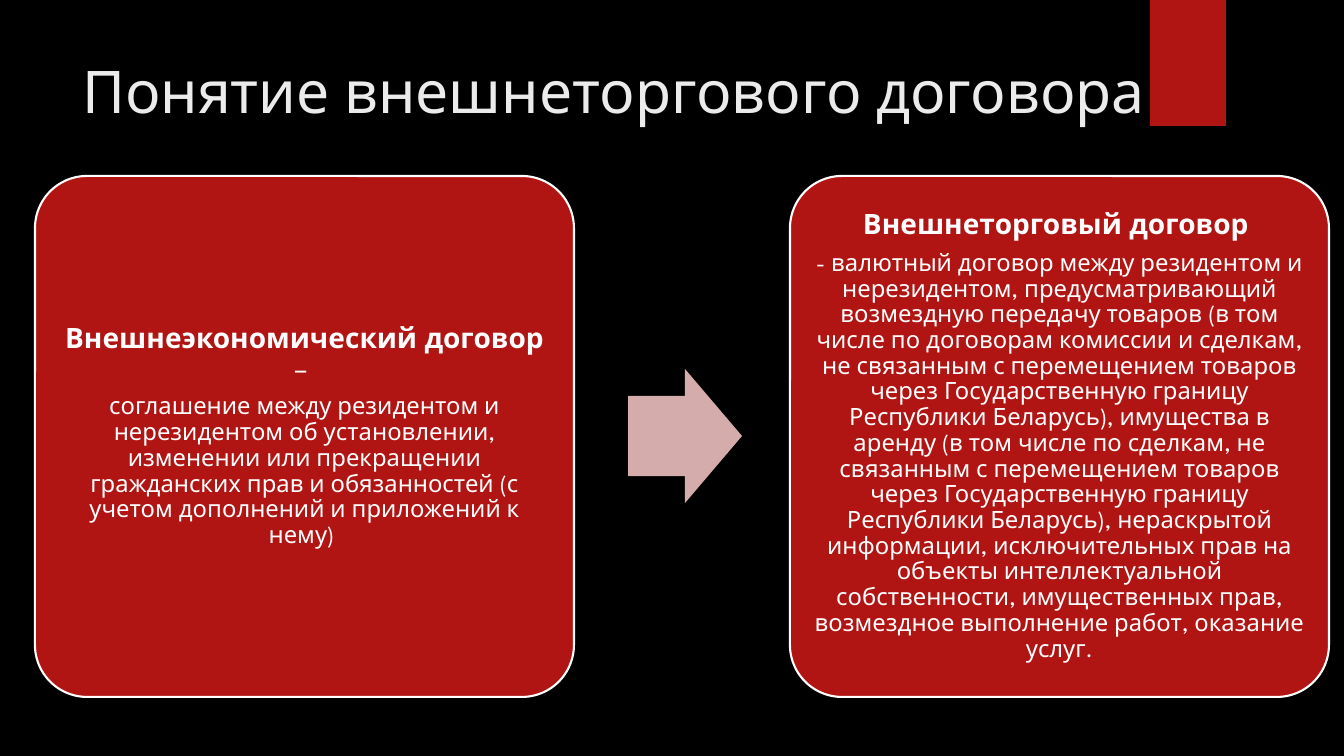
from dataclasses import dataclass

from pptx import Presentation
from pptx.dml.color import RGBColor
from pptx.enum.shapes import MSO_SHAPE as Shape
from pptx.enum.text import MSO_ANCHOR as Anchor, MSO_AUTO_SIZE as AutoSize, PP_ALIGN as Align
from pptx.util import Emu, Pt

EMU_PER_PX = 914400 / 100.8


@dataclass(frozen=True)
class Theme:
    font: str = "League Spartan"
    back: str = "000000"
    red: str = "B01513"
    pink: str = "D4ACAB"
    white: str = "FFFFFF"
    title: str = "EBEBEB"
    title_size: int = 42
    head_size: int = 20
    body_size: int = 17


THEME = Theme()

TITLE = "Понятие внешнеторгового договора"
FOREIGN_ECONOMIC = (
    [("Внешнеэкономический договор ", True), ("– ", False)],
    "соглашение между резидентом и нерезидентом об установлении, изменении или "
    "прекращении гражданских прав и обязанностей (с учетом дополнений и приложений к нему) ",
)
FOREIGN_TRADE = (
    [("Внешнеторговый договор ", True)],
    "- валютный договор между резидентом и нерезидентом, предусматривающий возмездную "
    "передачу товаров (в том числе по договорам комиссии и сделкам, не связанным с "
    "перемещением товаров через Государственную границу Республики Беларусь), имущества "
    "в аренду (в том числе по сделкам, не связанным с перемещением товаров через "
    "Государственную границу Республики Беларусь), нераскрытой информации, исключительных "
    "прав на объекты интеллектуальной собственности, имущественных прав, возмездное "
    "выполнение работ, оказание услуг.",
)


def px(n):
    return Emu(round(n * EMU_PER_PX))


def rgb(value):
    return RGBColor.from_string(value)


def set_all(target, **values):
    for name, value in values.items():
        setattr(target, name, value)


def add_run(p, text, size, color, bold=False):
    r = p.add_run()
    r.text = text
    set_all(r.font, name=THEME.font, size=Pt(size), bold=bold)
    r.font.color.rgb = rgb(color)


def add_filled(s, kind, box, fill, adjustments=()):
    sp = s.shapes.add_shape(kind, *map(px, box))
    sp.shadow.inherit = False
    sp.fill.solid()
    sp.fill.fore_color.rgb = rgb(fill)
    sp.line.fill.background()
    for i, value in enumerate(adjustments):
        sp.adjustments[i] = value
    return sp


def add_title(s, box):
    sp = s.shapes.title
    set_all(sp, **dict(zip(("left", "top", "width", "height"), map(px, box))))
    tf = sp.text_frame
    set_all(tf, vertical_anchor=Anchor.TOP, word_wrap=True, auto_size=AutoSize.NONE)
    p = tf.paragraphs[0]
    p.alignment = Align.LEFT
    add_run(p, TITLE, THEME.title_size, THEME.title)


def add_card(s, box, heading, body):
    sp = add_filled(s, Shape.ROUNDED_RECTANGLE, box, THEME.red, [0.1])
    sp.line.color.rgb = rgb(THEME.white)
    sp.line.width = Pt(1.5)
    tf = sp.text_frame
    set_all(tf, word_wrap=True, vertical_anchor=Anchor.MIDDLE)
    set_all(tf, **{f"margin_{side}": px(8) for side in ("left", "top", "right", "bottom")})
    paragraphs = (
        (tf.paragraphs[0], heading, THEME.head_size),
        (tf.add_paragraph(), [(body, False)], THEME.body_size),
    )
    for p, runs, size in paragraphs:
        set_all(p, alignment=Align.CENTER, line_spacing=0.9, space_after=Pt(round(size * 0.35)))
        for text, bold in runs:
            add_run(p, text, size, THEME.white, bold)


def add_comparison(s, box):
    """Two cards at the ends of the box, with an arrow between them."""
    left, top, width, height = box
    card_w, arrow_w, arrow_h = 539, 114, 134
    add_card(s, (left, top, card_w, height), *FOREIGN_ECONOMIC)
    arrow_left = left + card_w + 54
    arrow_top = top + (height - arrow_h) // 2
    add_filled(s, Shape.RIGHT_ARROW, (arrow_left, arrow_top, arrow_w, arrow_h),
               THEME.pink, [0.6, 0.5])
    add_card(s, (left + width - card_w, top, card_w, height), *FOREIGN_TRADE)


def build_slide(prs):
    s = prs.slides.add_slide(prs.slide_layouts[5])
    s.background.fill.solid()
    s.background.fill.fore_color.rgb = rgb(THEME.back)
    add_filled(s, Shape.RECTANGLE, (1150, 0, 76, 126), THEME.red)
    add_title(s, (72, 50, 1138, 103))
    add_comparison(s, (35, 176, 1294, 521))


def main():
    prs = Presentation()
    set_all(prs, slide_width=px(1344), slide_height=px(756))
    build_slide(prs)
    prs.save("out.pptx")


if __name__ == "__main__":
    main()
